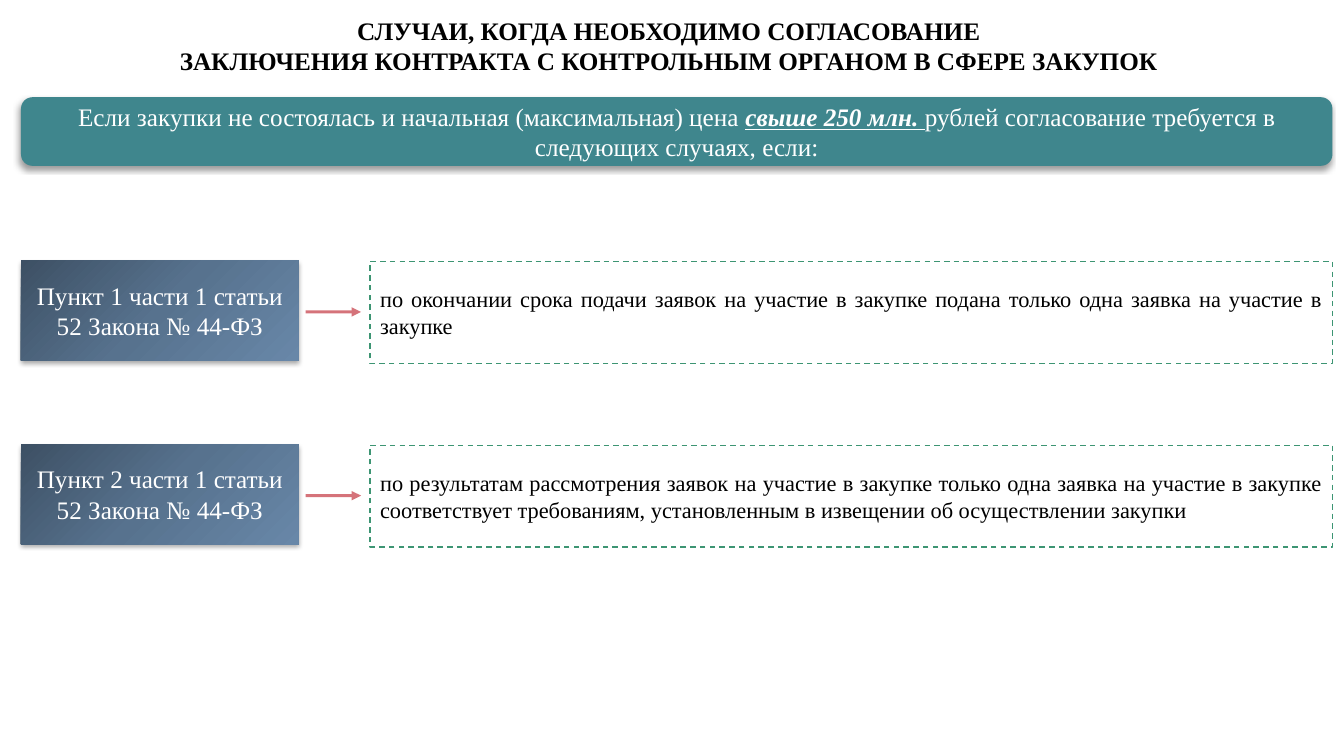
from copy import deepcopy
from dataclasses import dataclass

from pptx import Presentation
from pptx.dml.color import RGBColor as Rgb
from pptx.enum.dml import MSO_LINE as Dash
from pptx.enum.shapes import MSO_CONNECTOR as Link, MSO_SHAPE as Kind
from pptx.enum.text import MSO_ANCHOR as Anchor, PP_ALIGN as Align
from pptx.oxml import parse_xml
from pptx.oxml.ns import nsdecls, qn
from pptx.util import Cm, Pt


@dataclass(frozen=True)
class Theme:
    font: str = "Times New Roman"
    large: int = 18
    small: int = 16
    dark: str = "000000"
    light: str = "FFFFFF"
    teal: str = "3F868D"
    green: str = "3D9573"
    red: str = "C53B45"
    blues: tuple = ("3D5064", "57728E", "6887A8")


THEME = Theme()


def write(shape, *parts, size=THEME.large, color=THEME.dark, align=Align.CENTER,
          bold=False):
    """Fill a shape with text; a part in a tuple is emphasised."""
    frame = shape.text_frame
    frame.word_wrap = True
    frame.vertical_anchor = Anchor.MIDDLE
    para = frame.paragraphs[0]
    para.alignment = align
    for part in parts:
        strong = isinstance(part, tuple)
        for i, line in enumerate((part[0] if strong else part).split("\n")):
            if i:
                para.add_line_break()
            run = para.add_run()
            run.text = line
            font = run.font
            font.name, font.size = THEME.font, Pt(size)
            font.color.rgb = Rgb.from_string(color)
            font.bold = bold or strong
            font.italic = font.underline = strong


class Page:
    def __init__(self, deck, theme):
        self.theme = theme
        self.slide = deck.slides.add_slide(deck.slide_layouts[5])
        self.shapes = self.slide.shapes

    def title(self, text, x, y, w, h):
        head = self.shapes.title
        head.left, head.top, head.width, head.height = map(Cm, (x, y, w, h))
        write(head, text, bold=True)

    def box(self, kind, x, y, w, h):
        shape = self.shapes.add_shape(kind, *map(Cm, (x, y, w, h)))
        shape.shadow.inherit = False
        shape.fill.background()
        shape.line.fill.background()
        return shape

    def shade(self, shape, alpha, blur, dist, angle):
        effect = shape._element.spPr.find(qn("a:effectLst"))
        effect.append(parse_xml(
            f'<a:outerShdw {nsdecls("a")} blurRad="{Pt(blur)}" dist="{Pt(dist)}" '
            f'dir="{angle * 60000}" rotWithShape="0"><a:srgbClr val="{self.theme.dark}">'
            f'<a:alpha val="{alpha * 1000}"/></a:srgbClr></a:outerShdw>'))

    def banner(self, parts, x, y, w, h):
        shape = self.box(Kind.ROUNDED_RECTANGLE, x, y, w, h)
        shape.fill.solid()
        shape.fill.fore_color.rgb = Rgb.from_string(self.theme.teal)
        self.shade(shape, 40, 4, 3, 135)
        write(shape, *parts, color=self.theme.light)

    def label(self, text, x, y, w, h):
        shape = self.box(Kind.RECTANGLE, x, y, w, h)
        fill = shape.fill
        fill.gradient()
        fill.gradient_angle = 315
        # The default gradient has two stops; add the third
        stops = shape._element.spPr.find(".//" + qn("a:gsLst"))
        stops.append(deepcopy(stops[-1]))
        for i, (stop, color) in enumerate(zip(fill.gradient_stops, self.theme.blues)):
            stop.position = i / 2
            stop.color.rgb = Rgb.from_string(color)
        self.shade(shape, 32, 3.5, 2.2, 90)
        write(shape, text, color=self.theme.light)

    def frame(self, text, x, y, w, h):
        shape = self.box(Kind.RECTANGLE, x, y, w, h)
        shape.line.color.rgb = Rgb.from_string(self.theme.green)
        shape.line.width = Pt(1)
        shape.line.dash_style = Dash.DASH
        write(shape, text, size=self.theme.small, align=Align.JUSTIFY)

    def arrow(self, x, y, end):
        link = self.shapes.add_connector(Link.STRAIGHT, *map(Cm, (x, y, end, y)))
        link.line.color.rgb = Rgb.from_string(self.theme.red)
        link.line.width = Pt(2.25)
        props = link._element.spPr
        line = props.find(qn("a:ln"))
        line.find(".//" + qn("a:srgbClr")).append(
            parse_xml(f'<a:alpha {nsdecls("a")} val="71000"/>'))
        line.append(parse_xml(f'<a:tailEnd {nsdecls("a")} type="triangle"/>'))
        props.append(parse_xml(f'<a:effectLst {nsdecls("a")}/>'))


CASES = (
    ("Пункт 1 части 1 статьи 52 Закона № 44-ФЗ",
     "по окончании срока подачи заявок на участие в закупке подана только одна "
     "заявка на участие в закупке"),
    ("Пункт 2 части 1 статьи 52 Закона № 44-ФЗ",
     "по результатам рассмотрения заявок на участие в закупке только одна заявка "
     "на участие в закупке соответствует требованиям, установленным в извещении "
     "об осуществлении закупки"),
)


def main():
    deck = Presentation()
    deck.slide_width, deck.slide_height = Cm(33.87), Cm(19.05)
    page = Page(deck, THEME)

    # Heading and condition
    page.title("СЛУЧАИ, КОГДА НЕОБХОДИМО СОГЛАСОВАНИЕ \n"
               "ЗАКЛЮЧЕНИЯ КОНТРАКТА С КОНТРОЛЬНЫМ ОРГАНОМ В СФЕРЕ ЗАКУПОК ",
               0, 0.03, 33.87, 2.24)
    page.banner(("Если закупки не состоялась и начальная (максимальная) цена ",
                 ("свыше 250 млн. ",),
                 "рублей согласование требуется в следующих случаях, если:"),
                0.53, 2.45, 33.05, 1.73)

    # One row per case: clause, arrow, explanation
    for i, (clause, text) in enumerate(CASES):
        top = 6.56 + i * 4.63
        page.label(clause, 0.53, top, 7, 2.52)
        page.frame(text, 9.33, top + 0.03, 24.25, 2.57)
        page.arrow(7.7, top + 1.3, 9.1)

    deck.save("out.pptx")


if __name__ == "__main__":
    main()
